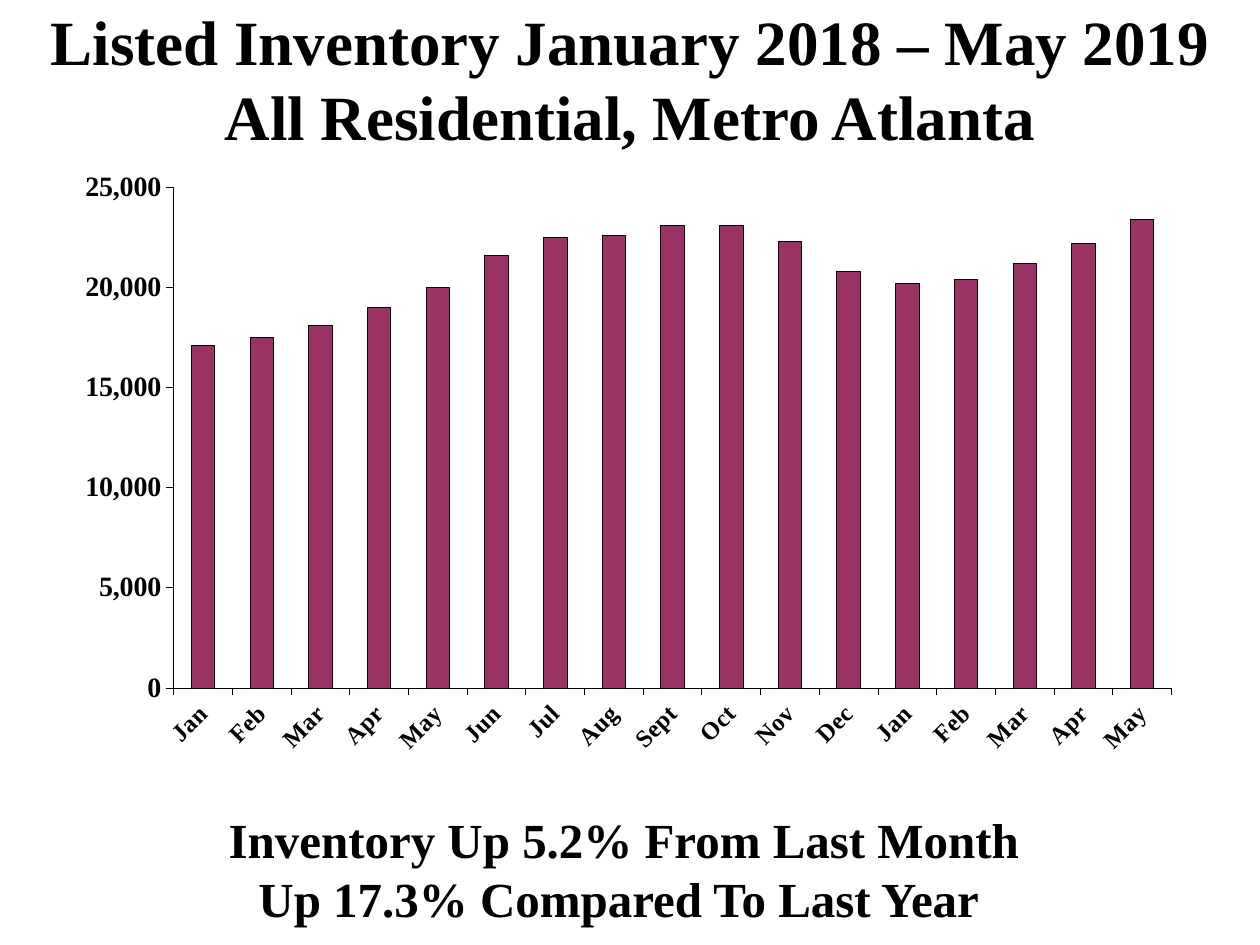
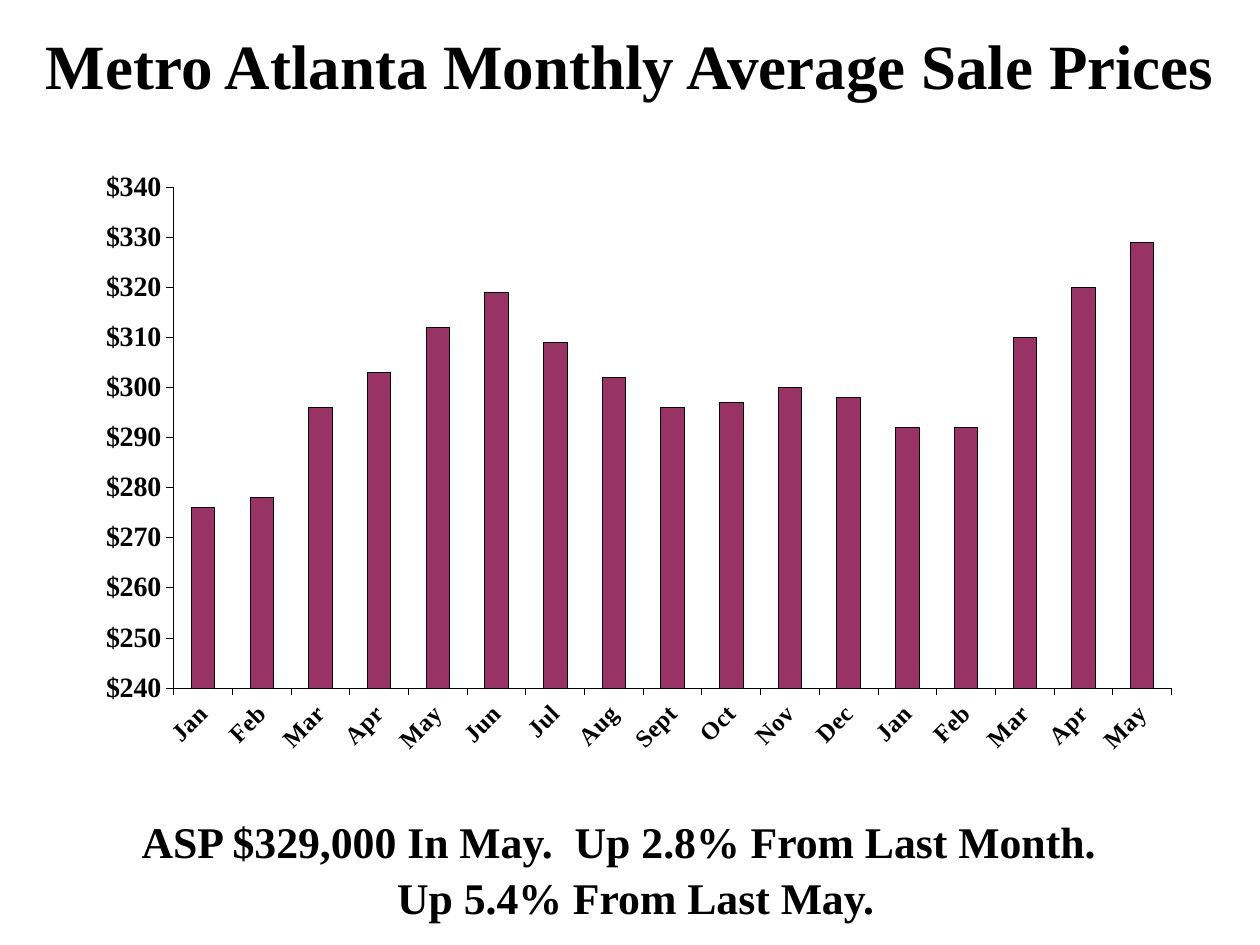
import pptx
import pptx.chart.data
import pptx.dml.color
import pptx.enum.chart
import pptx.enum.text
import pptx.oxml
import pptx.oxml.ns
import pptx.util

Inches = pptx.util.Inches
Pt = pptx.util.Pt

FONT = "Times New Roman"
BLACK = "000000"
PLUM = "993366"
YEAR = ["Jan", "Feb", "Mar", "Apr", "May", "Jun",
        "Jul", "Aug", "Sept", "Oct", "Nov", "Dec"]
MONTHS = YEAR + YEAR[:5]
STOCK = [17100, 17500, 18100, 19000, 20000, 21600, 22500, 22600, 23100,
         23100, 22300, 20800, 20200, 20400, 21200, 22200, 23400]
PRICES = [276, 278, 296, 303, 312, 319, 309, 302, 296,
          297, 300, 298, 292, 292, 310, 320, 329]
PLOT = {"x": 0.107, "y": 0.088, "w": 0.876, "h": 0.717}


def color(code):
    return pptx.dml.color.RGBColor.from_string(code)


def style(font, size):
    font.name = FONT
    font.size = Pt(size)
    font.bold = True
    font.color.rgb = color(BLACK)


def write(shape, lines, size, pitch):
    """Fill a shape with centred bold lines, pitch points apart."""
    frame = shape.text_frame
    frame.text = "\n".join(lines)
    frame.word_wrap = True
    frame.auto_size = pptx.enum.text.MSO_AUTO_SIZE.NONE
    frame.vertical_anchor = pptx.enum.text.MSO_ANCHOR.MIDDLE
    frame.margin_top = frame.margin_bottom = 0
    for line in frame.paragraphs:
        line.alignment = pptx.enum.text.PP_ALIGN.CENTER
        line.line_spacing = Pt(pitch)
        line.space_before = Pt(0)
        for run in line.runs:
            style(run.font, size)


def add_title(slide, lines, top, height):
    title = slide.shapes.title
    title.left, title.top = Inches(0), Inches(top)
    title.width, title.height = Inches(10), Inches(height)
    write(title, lines, 36, 43)


def add_note(slide, lines, size, pitch, top, indents):
    """Add the closing lines, each with its own left indent."""
    box = slide.shapes.add_textbox(
        Inches(0), Inches(top), Inches(9.82), Inches(1))
    write(box, lines, size, pitch)
    for line, indent in zip(box.text_frame.paragraphs, indents):
        line._p.get_or_add_pPr().set("marL", str(Inches(indent)))


def place_plot(chart):
    """Fix the inner plot area as fractions of the chart."""
    qn = pptx.oxml.ns.qn
    area = chart._chartSpace.chart.plotArea
    for old in area.findall(qn("c:layout")):
        area.remove(old)
    marks = [("layoutTarget", "inner"), ("xMode", "edge"), ("yMode", "edge")]
    marks += PLOT.items()
    body = "".join(f'<c:{tag} val="{val}"/>' for tag, val in marks)
    area.insert(0, pptx.oxml.parse_xml(
        f'<c:layout {pptx.oxml.ns.nsdecls("c")}>'
        f"<c:manualLayout>{body}</c:manualLayout></c:layout>"))


def style_axis(axis, size):
    style(axis.tick_labels.font, size)
    axis.has_major_gridlines = False
    axis.major_tick_mark = pptx.enum.chart.XL_TICK_MARK.OUTSIDE
    axis.format.line.color.rgb = color(BLACK)
    axis.format.line.width = Pt(0.25)


def add_bars(slide, values, low, high, step, form):
    data = pptx.chart.data.CategoryChartData()
    data.categories = MONTHS
    data.add_series("Series 1", values)
    chart = slide.shapes.add_chart(
        pptx.enum.chart.XL_CHART_TYPE.COLUMN_CLUSTERED,
        Inches(0.41), Inches(1), Inches(9.04), Inches(5.54), data).chart
    chart.has_title = False
    chart.has_legend = False
    style(chart.font, 14)
    place_plot(chart)

    plot = chart.plots[0]
    plot.gap_width = 150
    plot.vary_by_categories = False
    bars = plot.series[0].format
    bars.fill.solid()
    bars.fill.fore_color.rgb = color(PLUM)
    bars.line.color.rgb = color(BLACK)
    bars.line.width = Pt(0.25)

    months = chart.category_axis
    style_axis(months, 14)
    months.tick_label_position = pptx.enum.chart.XL_TICK_LABEL_POSITION.LOW
    turn = months._element.find(".//" + pptx.oxml.ns.qn("a:bodyPr"))
    turn.set("rot", str(-45 * 60000))
    turn.set("vert", "horz")

    scale = chart.value_axis
    style_axis(scale, 16)
    scale.minimum_scale, scale.maximum_scale = low, high
    scale.major_unit = step
    scale.tick_labels.number_format = form
    scale.tick_labels.number_format_is_linked = False


def main():
    deck = pptx.Presentation()
    deck.slide_width, deck.slide_height = Inches(10), Inches(7.5)
    layout = deck.slide_layouts[5]

    slide = deck.slides.add_slide(layout)
    add_title(slide, ["Listed Inventory January 2018 – May 2019",
                      "All Residential, Metro Atlanta"], 0.08, 1.08)
    add_bars(slide, STOCK, 0, 25000, 5000, "#,##0")
    add_note(slide, ["Inventory Up 5.2% From Last Month",
                     "Up 17.3% Compared To Last Year"],
             28, 34, 6.39, [0.08, 0])

    slide = deck.slides.add_slide(layout)
    add_title(slide, ["Metro Atlanta Monthly Average Sale Prices"], 0.21, 0.6)
    add_bars(slide, PRICES, 240, 340, 10, '"$"#,##0')
    add_note(slide, ["ASP $329,000 In May.  Up 2.8% From Last Month.",
                     "Up 5.4% From Last May."],
             25, 32, 6.38, [0, 0.27])

    deck.save("out.pptx")


if __name__ == "__main__":
    main()
